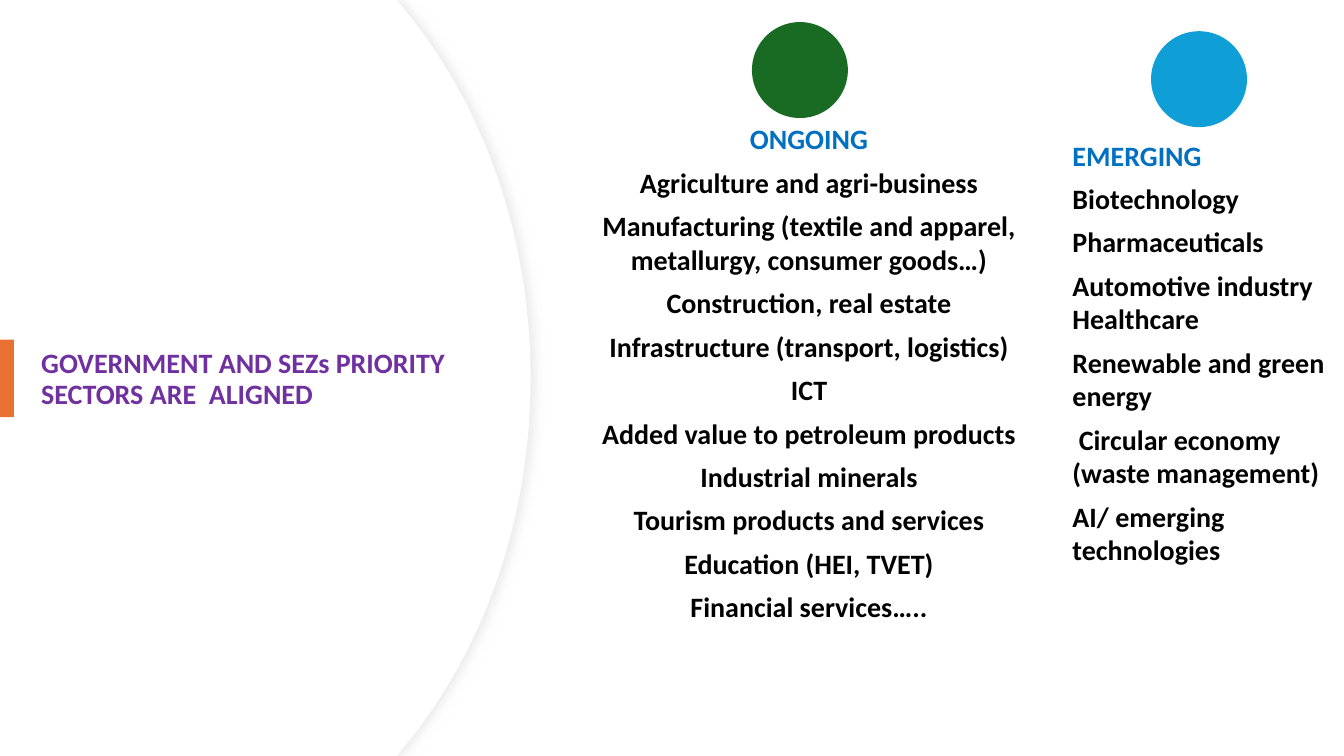
from lxml.etree import SubElement
from pptx import Presentation
from pptx.dml.color import RGBColor
from pptx.enum.shapes import MSO_SHAPE as Preset
from pptx.enum.text import MSO_ANCHOR as Anchor, PP_ALIGN as Align
from pptx.oxml.ns import qn
from pptx.util import Inches, Pt

COLUMNS, ROWS = 96, 54
CELL = Inches(7.5) / ROWS

deck = Presentation()
deck.slide_width, deck.slide_height = round(COLUMNS * CELL), round(ROWS * CELL)
slide = deck.slides.add_slide(deck.slide_layouts[6])


def paint(shape, fill, line=None):
    shape.shadow.inherit = False
    shape.fill.solid()
    shape.fill.fore_color.rgb = RGBColor.from_string(fill)
    if line:
        shape.line.color.rgb = RGBColor.from_string(line)
        shape.line.width = Pt(0.75)
    else:
        shape.line.fill.background()


def write(paragraphs, place, colors, align=Align.LEFT, anchor=Anchor.TOP,
          insets=(0, 0), spacing=1.0, after=0):
    """Place bold text; the last colour serves all remaining paragraphs."""
    frame = slide.shapes.add_textbox(*[round(n * CELL) for n in place]).text_frame
    frame.word_wrap = True
    frame.vertical_anchor = anchor
    frame.margin_left = frame.margin_right = Inches(insets[0])
    frame.margin_top = frame.margin_bottom = Inches(insets[1])
    for index, words in enumerate(paragraphs):
        paragraph = frame.paragraphs[0] if index == 0 else frame.add_paragraph()
        paragraph.alignment = align
        paragraph.line_spacing = spacing
        paragraph.space_after = Pt(after)
        run = paragraph.add_run()
        run.text = words
        run.font.name, run.font.size, run.font.bold = "Calibri", Pt(20), True
        color = colors[min(index, len(colors) - 1)]
        run.font.color.rgb = RGBColor.from_string(color)


# Curved title panel: a soft-edged back layer and a plain front layer
STEPS = 24
RIM = [(28.87, 0.58), (34.49, 7.34), (37.94, 16.7), (37.94, 27)]
for inset, outline in [(0, "EFEFEF"), (0.07, None)]:
    upper = [(28.37, 0)]
    for step in range(STEPS + 1):
        t = step / STEPS
        weights = [(1 - t) ** 3, 3 * t * (1 - t) ** 2, 3 * t * t * (1 - t), t ** 3]
        x, y = [sum(w * p[axis] for w, p in zip(weights, RIM)) for axis in (0, 1)]
        upper.append((x - inset, y))
    lower = [(x, ROWS - y) for x, y in reversed(upper[:-1])]
    corners = upper + lower + [(0, ROWS)]
    builder = slide.shapes.build_freeform(0, 0)
    builder.add_line_segments([(round(x * CELL), round(y * CELL)) for x, y in corners])
    panel = builder.convert_to_shape()
    paint(panel, "FFFFFF", outline)
    if outline:
        effects = panel._element.spPr.find(qn("a:effectLst"))
        shadow = SubElement(effects, qn("a:outerShdw"), blurRad=str(Pt(7)),
                            dist=str(Pt(3)), dir="0", algn="l", rotWithShape="0")
        tint = SubElement(shadow, qn("a:srgbClr"), val="D9D9D9")
        SubElement(tint, qn("a:alpha"), val="50000")

write(["GOVERNMENT AND SEZs PRIORITY SECTORS ARE  ALIGNED"],
      (2.23, 9.5, 31.03, 35.28), ["7030A0"], anchor=Anchor.MIDDLE,
      insets=(0.1, 0.05), spacing=0.9)

# Accent bar and the two column markers
DOT = 6.85
for preset, place, color in [
    (Preset.RECTANGLE, (0, 24.26, 1, 5.54), "E97132"),
    (Preset.OVAL, (53.71, 1.58, DOT, DOT), "196B24"),
    (Preset.OVAL, (82.22, 2.23, DOT, DOT), "0F9ED5"),
]:
    paint(slide.shapes.add_shape(preset, *[round(n * CELL) for n in place]), color)

ongoing = [
    "ONGOING",
    "Agriculture and agri-business",
    "Manufacturing (textile and apparel, metallurgy, consumer goods…)",
    "Construction, real estate",
    "Infrastructure (transport, logistics)",
    "ICT",
    "Added value to petroleum products",
    "Industrial minerals",
    "Tourism products and services",
    "Education (HEI, TVET)",
    "Financial services…..",
]
emerging = [
    "EMERGING",
    "Biotechnology",
    "Pharmaceuticals",
    "Automotive industry Healthcare",
    "Renewable and green energy",
    " Circular economy (waste management)",
    "AI/ emerging technologies",
]
for sectors, place, align in [
    (ongoing, (40.9, 8.71, 33.77, 43.8), Align.CENTER),
    (emerging, (76.61, 9.86, 18.29, 40.75), Align.LEFT),
]:
    write(sectors, place, ["0070C0", "000000"], align=align, after=7)

deck.save("out.pptx")
